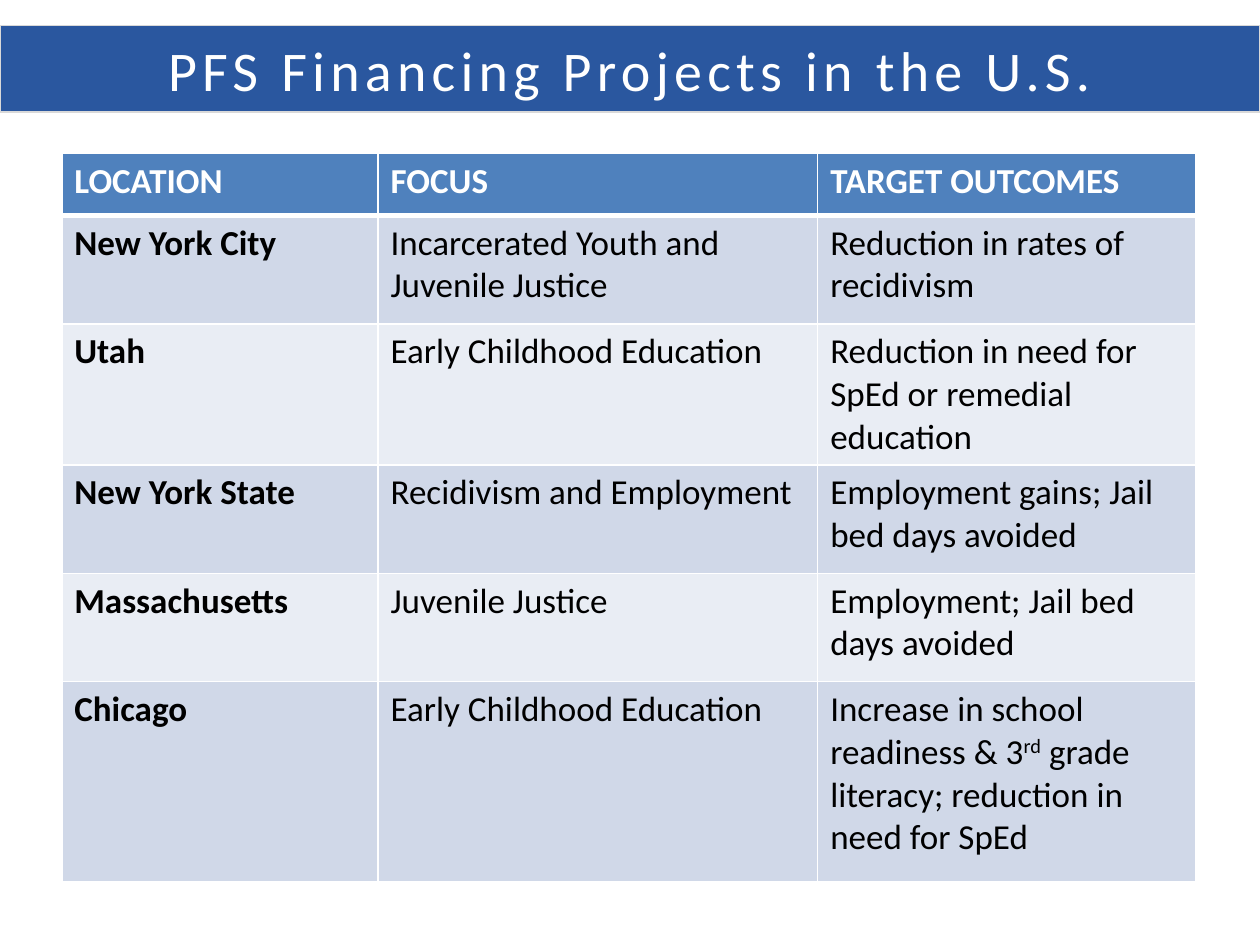
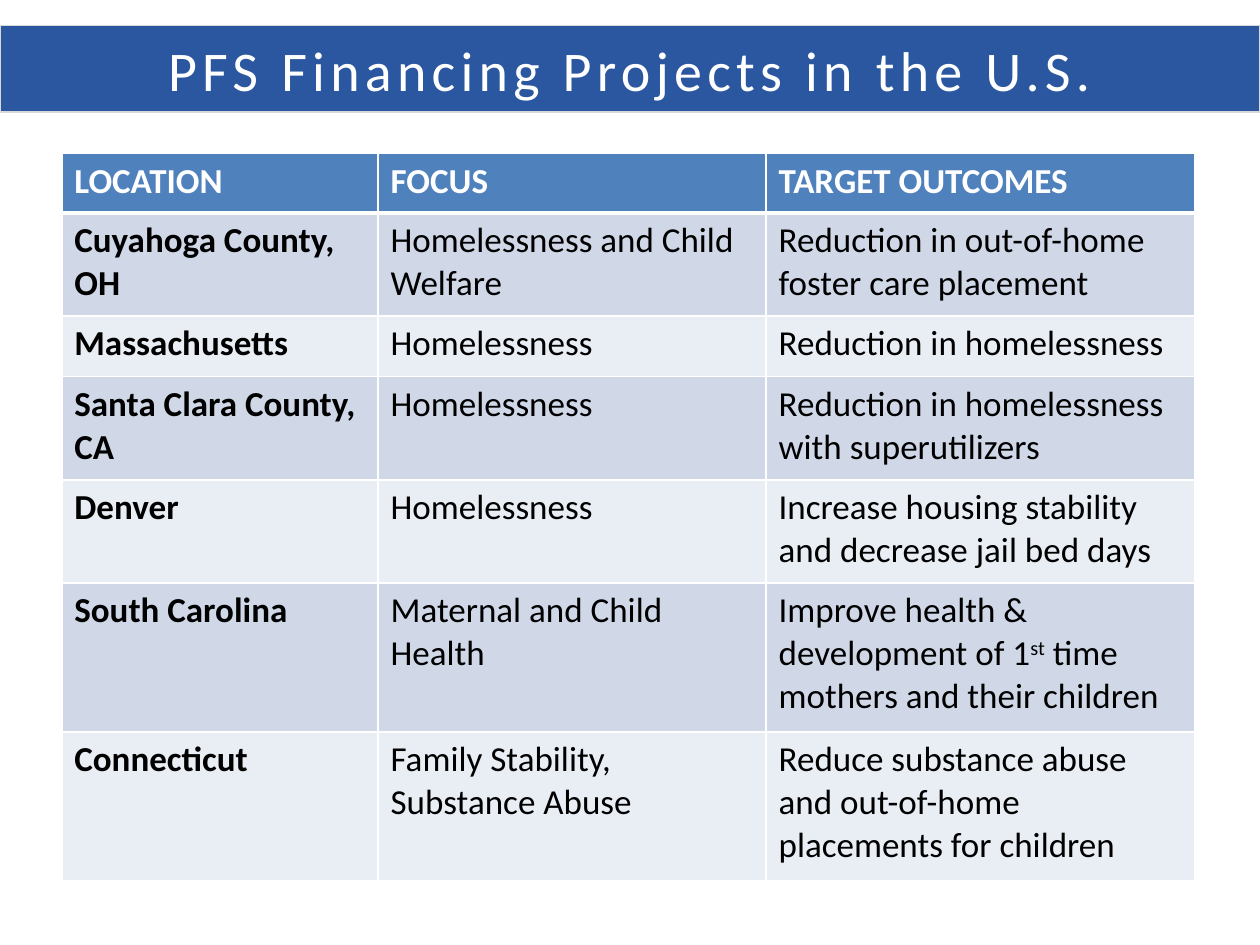
from lxml import etree
from pptx import Presentation
from pptx import util as u
from pptx.dml.color import RGBColor
from pptx.enum import text
from pptx.oxml import ns

COLS, ROWS = 100, 75
FONT = "Calibri"
HUES = {
    "band": "2A579F", "edge": "D9D9D9", "head": "4F81BD",
    "odd": "D0D8E8", "even": "E9EDF4", "white": "FFFFFF", "ink": "000000",
}
TITLE = "PFS Financing Projects in the U.S."
HEADS = ("LOCATION", "FOCUS", "TARGET OUTCOMES")


class Deck:
    def __init__(self):
        self.prs = Presentation()
        self.prs.slide_width = u.Inches(10)
        self.prs.slide_height = u.Inches(7.5)
        self.slide = None

    def hue(self, name):
        return RGBColor.from_string(HUES[name])

    def wide(self, cols):
        return round(self.prs.slide_width * cols / COLS)

    def high(self, rows):
        return round(self.prs.slide_height * rows / ROWS)

    def page(self):
        self.slide = self.prs.slides.add_slide(self.prs.slide_layouts[5])

    def label(self, para, words, size, hue, bold=False, gap=None):
        """Add words run by run; parts between ^ marks are superscript."""
        for i, part in enumerate(words.split("^")):
            run = para.add_run()
            run.text = part
            run.font.name = FONT
            run.font.size = u.Pt(size)
            run.font.bold = bold
            run.font.color.rgb = self.hue(hue)
            props = run.font._element
            if i % 2:
                props.set("baseline", "30000")
            if gap:
                props.set("spc", str(gap * 100))

    def title(self, words):
        band = self.slide.shapes.title
        band.left, band.top = 0, self.high(2)
        band.width, band.height = self.wide(COLS), self.high(6.9)
        band.fill.solid()
        band.fill.fore_color.rgb = self.hue("band")
        band.line.color.rgb = self.hue("edge")
        band.line.width = u.Pt(0.75)
        frame = band.text_frame
        frame.auto_size = text.MSO_AUTO_SIZE.NONE
        frame.vertical_anchor = text.MSO_ANCHOR.MIDDLE
        para = frame.paragraphs[0]
        para.alignment = text.PP_ALIGN.CENTER
        self.label(para, words, 32, "white", gap=3)

    def rule(self, cell, base):
        """Draw white cell borders, with the given bottom width in points."""
        props = cell._tc.get_or_add_tcPr()
        for i, (side, size) in enumerate(zip("LRTB", (1, 1, 1, base))):
            line = etree.Element(ns.qn("a:ln" + side), w=str(int(u.Pt(size))))
            fill = etree.SubElement(line, ns.qn("a:solidFill"))
            etree.SubElement(fill, ns.qn("a:srgbClr"), val=HUES["white"])
            props.insert(i, line)

    def table(self, left, top, cols, rows, data):
        grid = self.slide.shapes.add_table(
            len(rows), len(cols), self.wide(left), self.high(top),
            self.wide(sum(cols)), self.high(sum(rows))).table
        for col, size in zip(grid.columns, cols):
            col.width = self.wide(size)
        for r, (row, size) in enumerate(zip(grid.rows, rows)):
            row.height = self.high(size)
            tint = "odd" if r % 2 else "even"
            for c, cell in enumerate(row.cells):
                cell.fill.solid()
                cell.fill.fore_color.rgb = self.hue(tint if r else "head")
                self.rule(cell, 1 if r else 3)
                self.label(cell.text_frame.paragraphs[0], data[r][c], 20,
                           "ink" if r else "white", bold=not r or not c)


PAGES = [
    ((25.1, 34.9, 30), (4.9, 8.6, 11.2, 8.6, 8.6, 15.9), [
        ("New York City", "Incarcerated Youth and Juvenile Justice",
         "Reduction in rates of recidivism"),
        ("Utah", "Early Childhood Education",
         "Reduction in need for SpEd or remedial education"),
        ("New York State", "Recidivism and Employment",
         "Employment gains; Jail bed days avoided"),
        ("Massachusetts", "Juvenile Justice",
         "Employment; Jail bed days avoided"),
        ("Chicago", "Early Childhood Education",
         "Increase in school readiness & 3^rd^ grade literacy; "
         "reduction in need for SpEd"),
    ]),
    ((25.1, 30.8, 34), (4.7, 8.2, 4.8, 8.2, 8.2, 11.8, 11.8), [
        ("Cuyahoga County, OH", "Homelessness and Child Welfare",
         "Reduction in out-of-home foster care placement"),
        ("Massachusetts", "Homelessness", "Reduction in homelessness"),
        ("Santa Clara County, CA", "Homelessness",
         "Reduction in homelessness with superutilizers"),
        ("Denver", "Homelessness",
         "Increase housing stability and decrease jail bed days"),
        ("South Carolina", "Maternal and Child Health",
         "Improve health & development of 1^st^ time mothers "
         "and their children"),
        ("Connecticut", "Family Stability, Substance Abuse",
         "Reduce substance abuse and out-of-home placements for children"),
    ]),
]


def main():
    deck = Deck()
    for cols, rows, data in PAGES:
        deck.page()
        deck.title(TITLE)
        deck.table(4.9, 12.2, cols, rows, [HEADS, *data])
    deck.prs.save("out.pptx")


if __name__ == "__main__":
    main()
